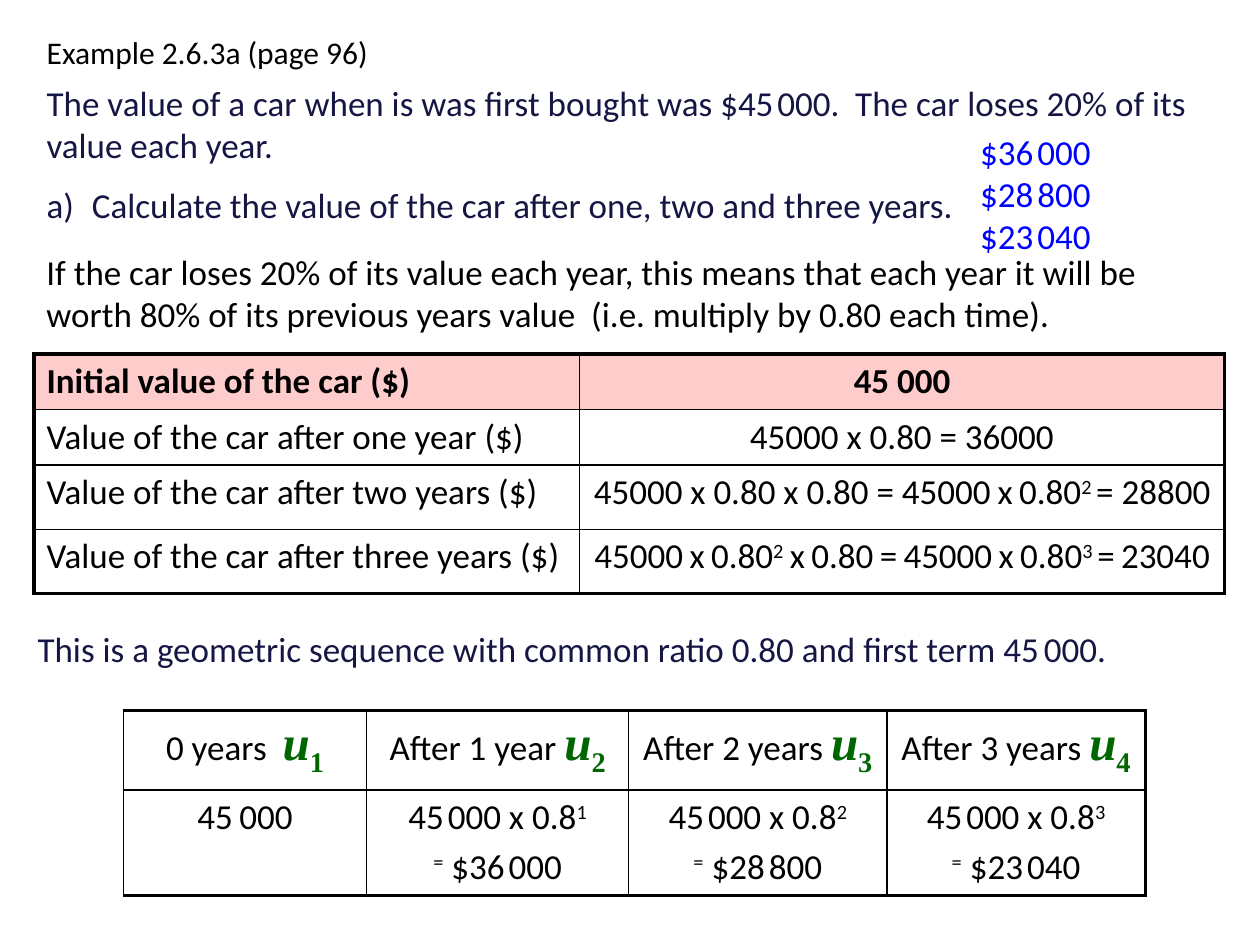
from lxml import etree
from pptx import Presentation
from pptx.dml.color import RGBColor
from pptx.enum.text import MSO_ANCHOR, MSO_AUTO_SIZE, PP_ALIGN
from pptx.oxml.ns import qn
from pptx.util import Inches, Pt

BLACK, NAVY, BLUE, GREEN, PINK = "000000", "161645", "0000FF", "006600", "FFCCCC"


def color(value):
    return RGBColor.from_string(value)


def write(tf, lines, ink=BLACK, size=20, narrow=10, before=0, align=PP_ALIGN.LEFT, bold=False):
    """One paragraph per line. Pieces between bars: ~ narrow space, ^ superscript,
    _ term index, * term letter."""
    tf.word_wrap = True
    tf.auto_size = MSO_AUTO_SIZE.NONE
    tf.vertical_anchor = MSO_ANCHOR.TOP
    for i, line in enumerate(lines):
        p = tf.paragraphs[0] if i == 0 else tf.add_paragraph()
        p.alignment = align
        p.space_before = Pt(before if i else 0)
        p.font.name, p.font.size, p.font.bold = "Calibri", Pt(size), bold
        p.font.color.rgb = color(ink)
        for piece in line.split("|"):
            mark = piece[0]
            r = p.add_run()
            r.text = " " if mark == "~" else piece.lstrip("^_*")
            if mark == "~":
                r.font.size = Pt(narrow)
            elif mark == "^":
                r._r.get_or_add_rPr().set("baseline", "30000")
            elif mark in "*_":
                r.font.name, r.font.size = "Times New Roman", Pt(28)
                r.font.bold, r.font.italic = True, mark == "*"
                r.font.color.rgb = color(GREEN)
                if mark == "_":
                    r._r.get_or_add_rPr().set("baseline", "-25000")


prs = Presentation()
prs.slide_width, prs.slide_height = Inches(10), Inches(7.5)
s = prs.slides.add_slide(prs.slide_layouts[1])

# Title and question
title, body = s.shapes.title, s.placeholders[1]
for sp, (x, y, w, h) in ((title, (0.27, 0.21, 3.62, 0.4)), (body, (0.27, 0.6, 9.53, 1.27))):
    sp.left, sp.top, sp.width, sp.height = Inches(x), Inches(y), Inches(w), Inches(h)
write(title.text_frame, ["Example 2.6.3a (page 96)"], size=18)
write(body.text_frame, [
    "The value of a car when is was first bought was $45|~|000.  "
    "The car loses 20% of its value each year.",
    "Calculate the value of the car after one, two and three years.",
], NAVY, narrow=8, before=10)
intro, task = [p._p.get_or_add_pPr() for p in body.text_frame.paragraphs]
for pPr, indent, tag in ((intro, 0, "a:buNone"), (task, Inches(0.36), "a:buAutoNum")):
    pPr.set("marL", str(indent))
    pPr.set("indent", str(-indent))
    bullet = etree.Element(qn(tag))
    if tag == "a:buAutoNum":
        bullet.set("type", "alphaLcParenR")
    pPr.find(qn("a:defRPr")).addprevious(bullet)

# Explanation, answers and conclusion
texts = [
    ((0.27, 1.94, 9.37, 0.77), BLACK, [
        "If the car loses 20% of its value each year, this means that each year it will be "
        "worth 80% of its previous years value  (i.e. multiply by 0.80 each time)."]),
    ((7.68, 0.99, 1.18, 1.1), BLUE, ["$36|~|000", "$28|~|800", "$23|~|040"]),
    ((0.2, 4.93, 9.53, 0.43), NAVY, [
        "This is a geometric sequence with common ratio 0.80 and first term 45|~|000."]),
]
for box, ink, lines in texts:
    sp = s.shapes.add_textbox(*map(Inches, box))
    write(sp.text_frame, lines, ink)

# Tables: each cell is a list of lines
values = [
    [["Initial value of the car ($)"], ["45 000"]],
    [["Value of the car after one year ($)"], ["45000 x 0.80 = 36000"]],
    [["Value of the car after two years ($)"],
     ["45000 x 0.80 x 0.80 = 45000|~|x|~|0.80|^2 |= 28800"]],
    [["Value of the car after three years ($)"],
     ["45000|~|x|~|0.80|^2|~|x|~|0.80|~|=|~|45000|~|x|~|0.80|^3 |=|~|23040"]],
]
terms = [
    [["0 years  |*u|_1"]],
    [["45|~|000"]],
]
for n, (label, amount) in enumerate(
        (("year", "$36|~|000"), ("years", "$28|~|800"), ("years", "$23|~|040")), 1):
    terms[0].append([f"After {n} {label} |*u|_{n + 1}"])
    terms[1].append([f"45|~|000 x 0.8|^{n}", f"^=| {amount}"])

# left, top, column widths, row heights, rows, left border, has heading row
tables = [
    (0.27, 2.81, (4.33, 5.12), (0.43, 0.44, 0.51, 0.51), values, 2.25, True),
    (0.98, 5.64, (1.93, 2.08, 2.05, 2.05), (0.63, 0.82), terms, 1, False),
]
for x, y, widths, heights, rows, left_line, heading in tables:
    frame = s.shapes.add_table(len(rows), len(widths), Inches(x), Inches(y),
                               Inches(sum(widths)), Inches(sum(heights)))
    table = frame.table
    table.first_row = table.horz_banding = False
    for col, w in zip(table.columns, widths):
        col.width = Inches(w)
    for row, h in zip(table.rows, heights):
        row.height = Inches(h)
    last_row, last_col = len(rows) - 1, len(widths) - 1
    for i, row in enumerate(rows):
        for j, lines in enumerate(row):
            cell = table.cell(i, j)
            top_row = heading and i == 0
            narrow = 16 if heading or (i, j) == (1, 0) else 10
            align = PP_ALIGN.LEFT if heading and j == 0 else PP_ALIGN.CENTER
            write(cell.text_frame, lines, narrow=narrow, before=4, align=align, bold=top_row)
            cell.vertical_anchor = MSO_ANCHOR.TOP
            if top_row:
                cell.fill.solid()
                cell.fill.fore_color.rgb = color(PINK)
            else:
                cell.fill.background()
            # Heavy outer frame, thin inner rules
            borders = (("a:lnL", left_line if j == 0 else 1),
                       ("a:lnR", 2.25 if j == last_col else 1),
                       ("a:lnT", 2.25 if i == 0 else 1),
                       ("a:lnB", 2.25 if i == last_row else 1))
            tcPr = cell._tc.get_or_add_tcPr()
            for k, (tag, width) in enumerate(borders):
                ln = etree.Element(qn(tag), w=str(Pt(width)))
                fill = etree.SubElement(ln, qn("a:solidFill"))
                etree.SubElement(fill, qn("a:srgbClr"), val=BLACK)
                tcPr.insert(k, ln)

prs.save("out.pptx")
